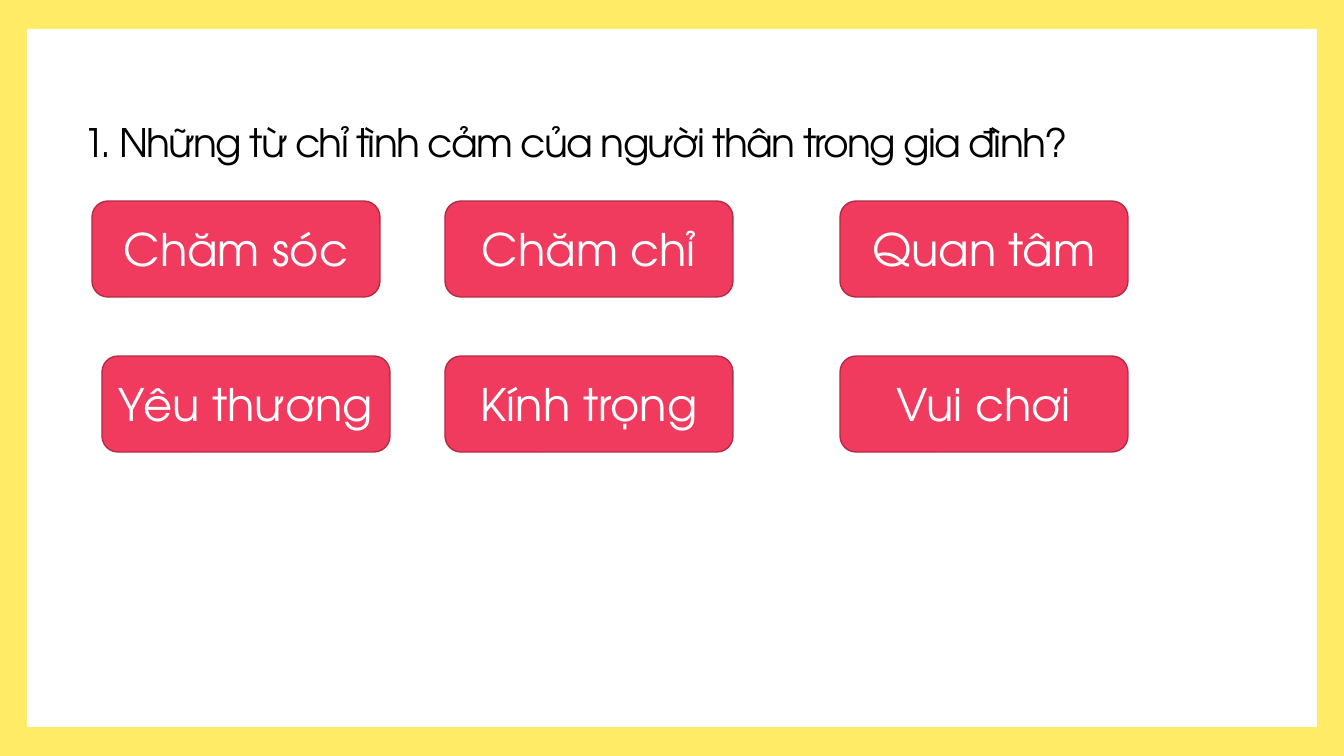
from dataclasses import dataclass

from pptx import Presentation
from pptx.dml.color import RGBColor
from pptx.enum.shapes import MSO_SHAPE as Preset
from pptx.enum.text import MSO_ANCHOR as Anchor, MSO_AUTO_SIZE as AutoSize, PP_ALIGN as Align
from pptx.util import Pt

EMU_PER_PX = 914400 / 100.8
SLIDE_WIDTH, SLIDE_HEIGHT = 1344, 756
TITLE_ONLY = 5

QUESTION = "1. Những từ chỉ tình cảm của người thân trong gia đình?"
WORD_ROWS = [
    ["Chăm sóc", "Chăm chỉ", "Quan tâm"],
    ["Yêu thương", "Kính trọng", "Vui chơi"],
]
COLUMN_LEFTS = [[92, 445, 840], [102, 445, 840]]
FIRST_ROW_TOP, ROW_STEP = 201, 155
CARD_WIDTH, CARD_HEIGHT = 288, 96


@dataclass(frozen=True)
class Theme:
    font: str = "TeX Gyre Adventor"
    frame: str = "FFEB66"
    paper: str = "FFFFFF"
    card: str = "F03B5E"
    card_edge: str = "B22C46"
    ink: str = "000000"
    card_ink: str = "FFFFFF"
    title_size: int = 28
    card_size: int = 32


def px(length):
    return round(length * EMU_PER_PX)


def color(code):
    return RGBColor.from_string(code)


def write_text(shape, text, *, font, size, ink, align=Align.LEFT, line_spacing=1.0, tracking=0):
    """Fill a shape with one paragraph; tracking is in hundredths of a point."""
    frame = shape.text_frame
    frame.word_wrap = True
    frame.auto_size = AutoSize.NONE
    frame.vertical_anchor = Anchor.MIDDLE
    paragraph = frame.paragraphs[0]
    paragraph.alignment = align
    paragraph.line_spacing = line_spacing
    run = paragraph.add_run()
    run.text = text
    run.font.name = font
    run.font.size = Pt(size)
    run.font.color.rgb = color(ink)
    if tracking:
        run.font._element.set("spc", str(tracking))


class SlideBuilder:
    def __init__(self, slide, theme):
        self.slide = slide
        self.theme = theme

    def box(self, left, top, width, height, *, fill, edge=None, preset=Preset.RECTANGLE):
        shape = self.slide.shapes.add_shape(preset, px(left), px(top), px(width), px(height))
        shape.shadow.inherit = False
        shape.fill.solid()
        shape.fill.fore_color.rgb = color(fill)
        if edge:
            shape.line.color.rgb = color(edge)
            shape.line.width = Pt(1)
        else:
            shape.line.fill.background()
        return shape

    def border(self):
        self.box(0, 0, SLIDE_WIDTH, SLIDE_HEIGHT, fill=self.theme.frame)
        self.box(27, 29, 1290, 698, fill=self.theme.paper)

    def title(self, text, left, top, width, height):
        """Place the title placeholder in front of everything drawn so far."""
        title = self.slide.shapes.title
        title.left, title.top = px(left), px(top)
        title.width, title.height = px(width), px(height)
        title._element.getparent().append(title._element)
        write_text(title, text, font=self.theme.font, size=self.theme.title_size,
                   ink=self.theme.ink, line_spacing=0.85, tracking=-120)

    def word_card(self, word, left, top):
        card = self.box(left, top, CARD_WIDTH, CARD_HEIGHT, fill=self.theme.card,
                        edge=self.theme.card_edge, preset=Preset.ROUNDED_RECTANGLE)
        write_text(card, word, font=self.theme.font, size=self.theme.card_size,
                   ink=self.theme.card_ink, align=Align.CENTER)


def main():
    presentation = Presentation()
    presentation.slide_width = px(SLIDE_WIDTH)
    presentation.slide_height = px(SLIDE_HEIGHT)
    slide = presentation.slides.add_slide(presentation.slide_layouts[TITLE_ONLY])
    builder = SlideBuilder(slide, Theme())
    builder.border()
    builder.title(QUESTION, 73, 55, 1187, 182)
    for row, (words, lefts) in enumerate(zip(WORD_ROWS, COLUMN_LEFTS)):
        for word, left in zip(words, lefts):
            builder.word_card(word, left, FIRST_ROW_TOP + row * ROW_STEP)
    presentation.save("out.pptx")


if __name__ == "__main__":
    main()
